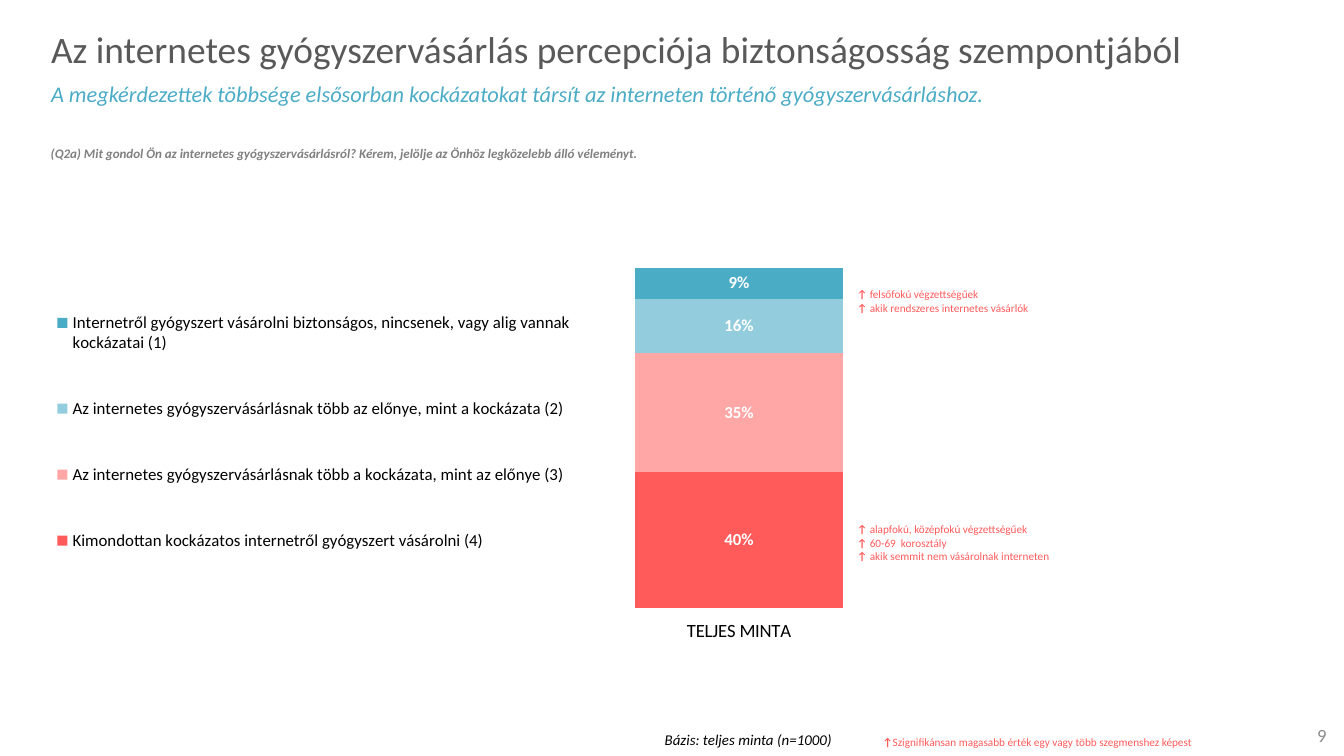
from pptx import Presentation
from pptx.chart.data import CategoryChartData
from pptx.dml.color import RGBColor
from pptx.enum.chart import XL_CHART_TYPE, XL_LEGEND_POSITION, XL_TICK_LABEL_POSITION
from pptx.enum.text import MSO_ANCHOR, MSO_AUTO_SIZE, PP_ALIGN
from pptx.oxml import parse_xml
from pptx.oxml.ns import nsdecls, qn
from pptx.util import Cm, Pt

FONT = "Calibri"
BLACK = RGBColor(0, 0, 0)
WHITE = RGBColor(255, 255, 255)
DARK = RGBColor(0x59, 0x59, 0x59)
GREY = RGBColor(0x80, 0x80, 0x80)
PALE = RGBColor(0x8C, 0x8C, 0x8C)
TEAL = RGBColor(0x4B, 0xAC, 0xC6)
SKY = RGBColor(0x93, 0xCD, 0xDD)
PINK = RGBColor(0xFF, 0xA7, 0xA7)
RED = RGBColor(0xFF, 0x5B, 0x5B)

# From the bottom of the column upwards
SERIES = [
    ("Kimondottan kockázatos internetről gyógyszert vásárolni (4)", 40, RED),
    ("Az internetes gyógyszervásárlásnak több a kockázata, mint az előnye (3)", 35, PINK),
    ("Az internetes gyógyszervásárlásnak több az előnye, mint a kockázata (2)", 16, SKY),
    ("Internetről gyógyszert vásárolni biztonságos, nincsenek, "
     "vagy alig vannak kockázatai (1)", 9, TEAL),
]


def set_font(font, size, color, bold=False, italic=False):
    font.name = FONT
    font.size = Pt(size)
    font.color.rgb = color
    font.bold = bold
    font.italic = italic


def add_run(para, text, **style):
    run = para.add_run()
    run.text = text
    set_font(run.font, **style)


def add_box(slide, x, y, w, h, anchor=MSO_ANCHOR.TOP):
    frame = slide.shapes.add_textbox(Cm(x), Cm(y), Cm(w), Cm(h)).text_frame
    frame.word_wrap = True
    frame.vertical_anchor = anchor
    return frame


def add_text(slide, text, x, y, w, h, align=PP_ALIGN.LEFT,
             anchor=MSO_ANCHOR.TOP, **style):
    para = add_box(slide, x, y, w, h, anchor).paragraphs[0]
    para.alignment = align
    add_run(para, text, **style)


def add_notes(slide, lines, x, y, w, h, mark="↑ "):
    """Add small red lines, each led by a bold arrow."""
    frame = add_box(slide, x, y, w, h)
    for i, line in enumerate(lines):
        para = frame.add_paragraph() if i else frame.paragraphs[0]
        add_run(para, mark, size=6, color=RED, bold=True)
        add_run(para, line, size=6, color=RED)


def add_title(slide, title, lead):
    shape = slide.shapes.title
    shape.left, shape.top, shape.width, shape.height = Cm(0.71), Cm(0.41), Cm(22.5), Cm(1.7)
    frame = shape.text_frame
    frame.auto_size = MSO_AUTO_SIZE.NONE
    frame.word_wrap = True
    frame.vertical_anchor = MSO_ANCHOR.MIDDLE
    head, sub = frame.paragraphs[0], frame.add_paragraph()
    head.alignment = sub.alignment = PP_ALIGN.LEFT
    sub.space_before = Pt(5)
    add_run(head, title, size=20, color=DARK)
    add_run(sub, lead, size=12, color=TEAL, italic=True)


def set_layout(part, index, x, y, w, h, inner=False):
    """Place a chart part by fractions of the chart area."""
    for old in part.findall(qn("c:layout")):
        part.remove(old)
    target = '<c:layoutTarget val="inner"/>' if inner else ""
    modes = "".join(f'<c:{k}Mode val="edge"/>' for k in "xy")
    sizes = "".join(f'<c:{k} val="{v}"/>' for k, v in zip("xywh", (x, y, w, h)))
    part.insert(index, parse_xml(
        f'<c:layout {nsdecls("c")}><c:manualLayout>{target}{modes}{sizes}'
        '</c:manualLayout></c:layout>'))


def add_stack(slide, x, y, w, h):
    data = CategoryChartData()
    data.categories = ["TELJES MINTA"]
    for name, value, _ in SERIES:
        data.add_series(name, [value])
    chart = slide.shapes.add_chart(XL_CHART_TYPE.COLUMN_STACKED_100,
                                   Cm(x), Cm(y), Cm(w), Cm(h), data).chart
    set_font(chart.font, 10, BLACK)
    chart.has_title = False

    plot = chart.plots[0]
    plot.gap_width = 100
    plot.overlap = 100
    plot.vary_by_categories = False
    for series, (_, _, color) in zip(plot.series, SERIES):
        series.format.fill.solid()
        series.format.fill.fore_color.rgb = color
        labels = series.data_labels
        labels.show_value = True
        labels.number_format = '0"%"'
        labels.number_format_is_linked = False
        set_font(labels.font, 9, WHITE, bold=True)

    chart.category_axis.format.line.fill.background()
    chart.category_axis.tick_label_position = XL_TICK_LABEL_POSITION.LOW
    axis = chart.value_axis
    axis.visible = False
    axis.has_major_gridlines = False
    axis.minimum_scale, axis.maximum_scale, axis.major_unit = 0, 1, 0.2

    chart.has_legend = True
    legend = chart.legend
    legend.position = XL_LEGEND_POSITION.LEFT
    legend.include_in_layout = False
    set_font(legend.font, 9, BLACK)
    area = plot._element.getparent()
    set_layout(area, 0, 0.415, 0.113, 0.337, 0.72, inner=True)
    set_layout(legend._element, 1, 0.03, 0.11, 0.42, 0.7)


def main():
    deck = Presentation()
    deck.slide_width, deck.slide_height = Cm(25.4), Cm(14.29)
    slide = deck.slides.add_slide(deck.slide_layouts[5])

    add_title(slide,
              "Az internetes gyógyszervásárlás percepciója biztonságosság szempontjából",
              "A megkérdezettek többsége elsősorban kockázatokat társít "
              "az interneten történő gyógyszervásárláshoz.")
    add_text(slide, "(Q2a) Mit gondol Ön az internetes gyógyszervásárlásról? "
             "Kérem, jelölje az Önhöz legközelebb álló véleményt.",
             0.71, 2.62, 21.97, 0.56, size=7, color=GREY, bold=True, italic=True)
    add_stack(slide, 0.3, 4.06, 23.42, 8.92)
    add_notes(slide, ["felsőfokú végzettségűek", "akik rendszeres internetes vásárlók"],
              15.95, 5.31, 4.24, 0.76)
    add_notes(slide, ["alapfokú, középfokú végzettségűek", "60-69  korosztály",
                      "akik semmit nem vásárolnak interneten"],
              15.95, 9.75, 4.24, 1.02)
    add_text(slide, "Bázis: teljes minta (n=1000)", 11.58, 13.69, 5.13, 0.6,
             align=PP_ALIGN.CENTER, size=8, color=BLACK, italic=True)
    add_notes(slide, ["Szignifikánsan magasabb érték egy vagy több szegmenshez képest"],
              16.43, 13.77, 6.58, 0.5, mark="↑")
    add_text(slide, "9", 24, 13.51, 1.32, 0.76, align=PP_ALIGN.RIGHT,
             anchor=MSO_ANCHOR.MIDDLE, size=10, color=PALE)
    deck.save("out.pptx")


if __name__ == "__main__":
    main()
